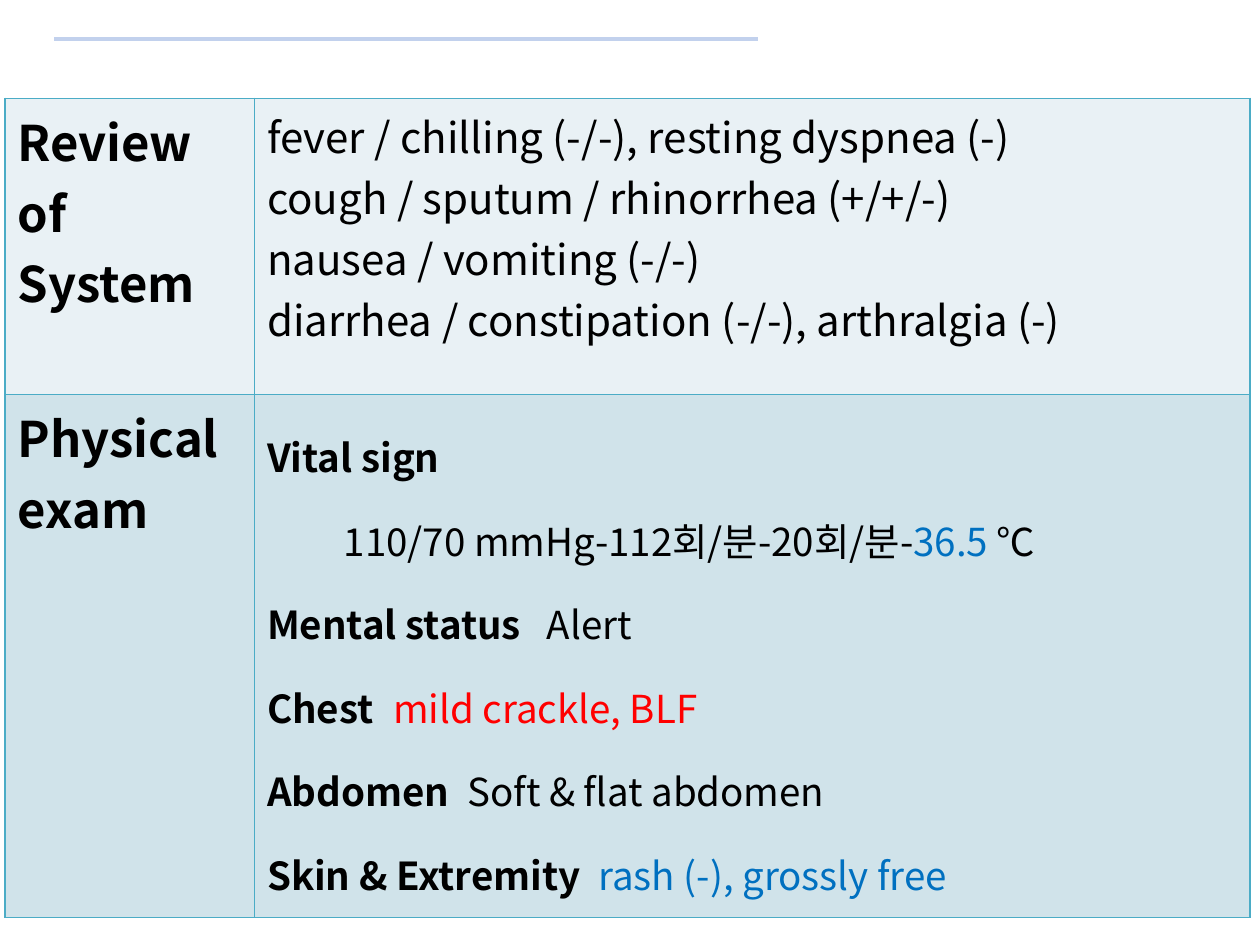
from dataclasses import dataclass

from lxml.etree import SubElement
from pptx import Presentation
from pptx.dml.color import RGBColor as Rgb
from pptx.enum.shapes import MSO_CONNECTOR as Connector
from pptx.oxml import parse_xml
from pptx.oxml.ns import nsdecls, qn
from pptx.util import Inches, Pt


@dataclass(frozen=True)
class Theme:
    """Colours, font and type sizes of the slide."""
    font: str = "Noto Sans CJK KR"
    black: str = "000000"
    red: str = "FF0000"
    blue: str = "0070C0"
    border: str = "4BACC6"
    rule: str = "C2D1ED"
    bands: tuple = ("E9F1F5", "D0E3EA")
    heading: int = 28
    symptom: int = 24
    finding: int = 22


THEME = Theme()
COLUMNS = (1.98, 7.9)
ROWS = (2.35, 4.15)
SYMPTOMS = (
    "fever / chilling (-/-), resting dyspnea (-)",
    "cough / sputum / rhinorrhea (+/+/-)",
    "nausea / vomiting (-/-)",
    "diarrhea / constipation (-/-), arthralgia (-)",
)
EXAMS = (
    ("Mental status", "Alert", THEME.black, 2.22),
    ("Chest", "mild crackle, BLF", THEME.red, 1.0),
    ("Abdomen", "Soft & flat abdomen", THEME.black, 1.59),
    ("Skin & Extremity", "rash (-), grossly free", THEME.blue, 2.63),
)


def add_rule(page, left, right, top):
    """Draw the pale horizontal rule above the table."""
    rule = page.shapes.add_connector(
        Connector.STRAIGHT, Inches(left), Inches(top), Inches(right), Inches(top))
    rule.line.color.rgb = Rgb.from_string(THEME.rule)
    rule.line.width = Pt(2.25)
    SubElement(rule._element.spPr, qn("a:effectLst"))


def add_span(para, text, size, bold=False, color=THEME.black):
    """Append one formatted run to a paragraph."""
    span = para.add_run()
    span.text = text
    span.font.size = Pt(size)
    span.font.bold = bold
    span.font.color.rgb = Rgb.from_string(color)
    span.font.name = THEME.font
    SubElement(span._r.get_or_add_rPr(), qn("a:ea"), typeface=THEME.font)


def set_tab(para, position):
    """Give a paragraph one left tab stop."""
    stops = SubElement(para._p.get_or_add_pPr(), qn("a:tabLst"))
    SubElement(stops, qn("a:tab"), pos=str(Inches(position)), algn="l")


def style_cell(cell, fill):
    """Fill a cell and outline its four sides."""
    cell.fill.solid()
    cell.fill.fore_color.rgb = Rgb.from_string(fill)
    properties = cell._tc.get_or_add_tcPr()
    for index, side in enumerate("LRTB"):
        properties.insert(index, parse_xml(
            f'<a:ln{side} {nsdecls("a")} w="{Pt(1)}"><a:solidFill>'
            f'<a:srgbClr val="{THEME.border}"/></a:solidFill></a:ln{side}>'))


def next_para(frame):
    """Return the first paragraph while it is empty, else a new one."""
    first = frame.paragraphs[0]
    return frame.add_paragraph() if first.runs else first


def add_table(page, left, top):
    """Add the two-by-two table with its fills and borders."""
    table = page.shapes.add_table(
        len(ROWS), len(COLUMNS), Inches(left), Inches(top),
        Inches(sum(COLUMNS)), Inches(sum(ROWS))).table
    table.first_row = table.horz_banding = False
    for column, width in zip(table.columns, COLUMNS):
        column.width = Inches(width)
    for row, height, fill in zip(table.rows, ROWS, THEME.bands):
        row.height = Inches(height)
        for cell in row.cells:
            style_cell(cell, fill)
    return table


def fill_symptoms(frame):
    """Write the review of systems, one line per paragraph."""
    for symptom in SYMPTOMS:
        add_span(next_para(frame), symptom, THEME.symptom)


def fill_exam(frame):
    """Write the vital signs and the labelled findings."""
    size = THEME.finding
    add_span(next_para(frame), "Vital sign", size, bold=True)
    vitals = next_para(frame)
    vitals._p.get_or_add_pPr().set("marL", str(Inches(0.61)))
    add_span(vitals, "110/70 mmHg-112회/분-20회/분-", size)
    add_span(vitals, "36.5 ", size, color=THEME.blue)
    add_span(vitals, "℃", size)
    for label, finding, color, stop in EXAMS:
        para = next_para(frame)
        set_tab(para, stop)
        add_span(para, f"{label}\t", size, bold=True)
        add_span(para, finding, size, color=color)
    for para in frame.paragraphs:
        para.line_spacing = 1.5


def main():
    """Build and save the slide."""
    deck = Presentation()
    deck.slide_width, deck.slide_height = Inches(10), Inches(7.5)
    page = deck.slides.add_slide(deck.slide_layouts[6])
    add_rule(page, 0.43, 6.02, 0.31)
    table = add_table(page, 0.04, 0.78)
    for row, heading in enumerate(("Review of System", "Physical exam")):
        para = next_para(table.cell(row, 0).text_frame)
        add_span(para, heading, THEME.heading, bold=True)
    fill_symptoms(table.cell(0, 1).text_frame)
    fill_exam(table.cell(1, 1).text_frame)
    deck.save("out.pptx")


if __name__ == "__main__":
    main()
